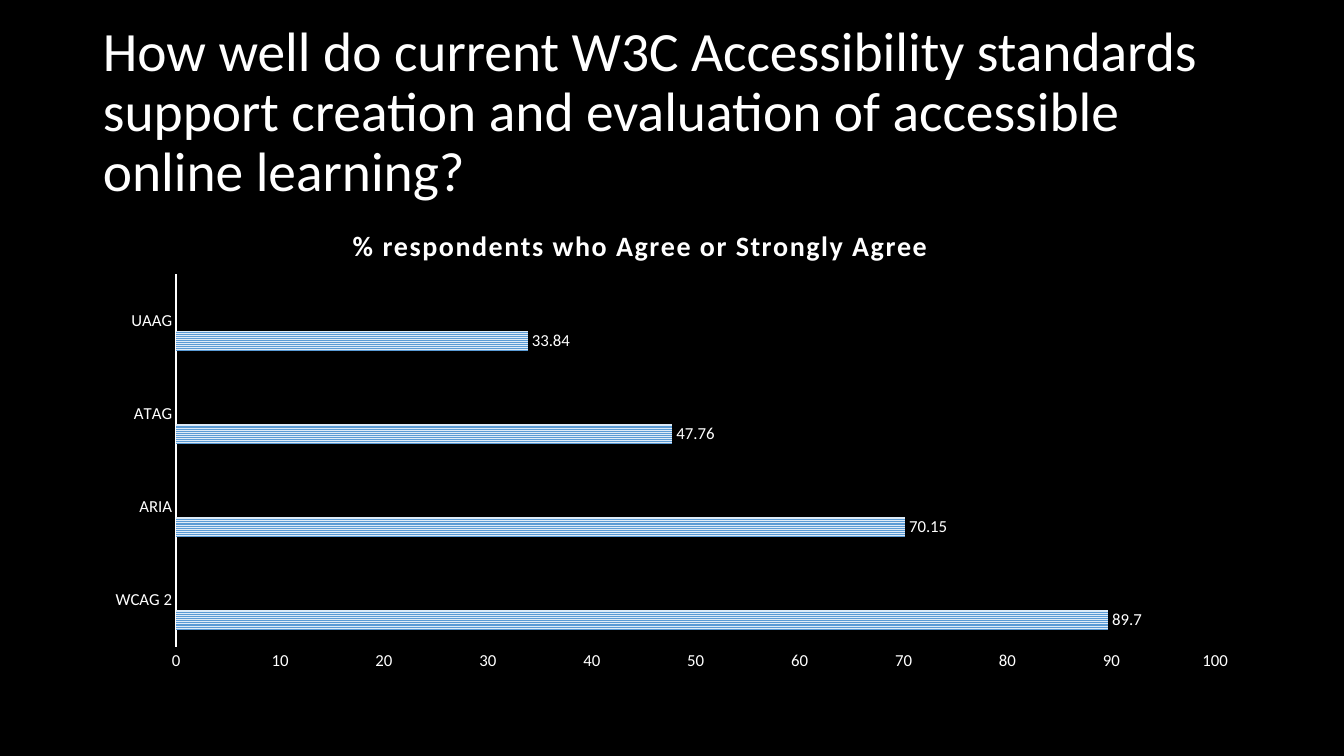
from lxml.etree import SubElement
from pptx import Presentation
from pptx.chart.data import CategoryChartData
from pptx.dml.color import RGBColor
from pptx.enum.chart import XL_CHART_TYPE as ChartType
from pptx.enum.chart import XL_LABEL_POSITION as LabelPosition
from pptx.enum.chart import XL_TICK_MARK as TickMark
from pptx.enum.dml import MSO_PATTERN as Pattern
from pptx.enum.text import MSO_ANCHOR as Anchor
from pptx.enum.text import MSO_AUTO_SIZE as AutoSize
from pptx.enum.text import PP_ALIGN as Align
from pptx.oxml.ns import qn
from pptx.util import Inches, Pt

FONT = "Calibri"
BLACK = RGBColor(0x00, 0x00, 0x00)
WHITE = RGBColor(0xFF, 0xFF, 0xFF)
# Foreground and background of each series' stripes
STRIPES = [
    (RGBColor(0x5B, 0x9B, 0xD5), RGBColor(0xDE, 0xEB, 0xF7)),
    (RGBColor(0xED, 0x7D, 0x31), RGBColor(0xFB, 0xE5, 0xD6)),
    (RGBColor(0xA5, 0xA5, 0xA5), RGBColor(0xED, 0xED, 0xED)),
]

SLIDE_WIDTH, SLIDE_HEIGHT = 13.33, 7.5
MARGIN = 0.92
CONTENT_WIDTH = SLIDE_WIDTH - 2 * MARGIN

QUESTION = ("How well do current W3C Accessibility standards support creation "
            "and evaluation of accessible online learning?")
CHART_TITLE = "% respondents who Agree or Strongly Agree"
STANDARDS = ["WCAG 2", "ARIA", "ATAG", "UAAG"]
AGREEMENT = [89.7, 70.15, 47.76, 33.84]


def style_font(font, size, bold=False):
    font.name = FONT
    font.size = Pt(size)
    font.bold = bold
    font.color.rgb = WHITE


def set_layout(element, following_tag, **shares):
    """Place a chart part by shares of the chart's size."""
    for old_layout in element.findall(qn("c:layout")):
        element.remove(old_layout)
    layout = element.makeelement(qn("c:layout"))
    element.find(qn(following_tag)).addprevious(layout)
    manual = SubElement(layout, qn("c:manualLayout"))
    if "w" in shares:
        SubElement(manual, qn("c:layoutTarget")).set("val", "inner")
    for mode in ("xMode", "yMode"):
        SubElement(manual, qn(f"c:{mode}")).set("val", "edge")
    for name, share in shares.items():
        SubElement(manual, qn(f"c:{name}")).set("val", str(share))


def add_question(slide, left, top, width, height):
    title = slide.shapes.title
    title.left, title.top = Inches(left), Inches(top)
    title.width, title.height = Inches(width), Inches(height)
    text_frame = title.text_frame
    text_frame.text = QUESTION
    text_frame.word_wrap = True
    text_frame.auto_size = AutoSize.NONE
    text_frame.vertical_anchor = Anchor.MIDDLE
    paragraph = text_frame.paragraphs[0]
    paragraph.alignment = Align.LEFT
    paragraph.line_spacing = 0.9
    style_font(paragraph.runs[0].font, 39.6)


def add_agreement_chart(slide, left, top, width, height):
    data = CategoryChartData()
    data.categories = STANDARDS
    data.add_series("Series 1", AGREEMENT)
    for name in ("Series 2", "Series 3"):
        data.add_series(name, [None] * len(STANDARDS))
    chart = slide.shapes.add_chart(
        ChartType.BAR_CLUSTERED, Inches(left), Inches(top),
        Inches(width), Inches(height), data).chart
    chart.has_legend = False
    style_font(chart.font, 10)

    # Chart title with wide letter spacing
    chart.has_title = True
    text_frame = chart.chart_title.text_frame
    text_frame.text = CHART_TITLE
    run = text_frame.paragraphs[0].runs[0]
    style_font(run.font, 20, bold=True)
    run.font._element.set("spc", "100")
    chart.chart_title.include_in_layout = False
    set_layout(chart.chart_title._element, "c:overlay", x=0.22, y=0.04)

    # Striped bars with value labels
    plot = chart.plots[0]
    plot.vary_by_categories = False
    plot.gap_width = 164
    plot.overlap = 0
    for series, (stripe, ground) in zip(plot.series, STRIPES):
        fill = series.format.fill
        fill.patterned()
        fill.pattern = Pattern.NARROW_HORIZONTAL
        fill.fore_color.rgb = stripe
        fill.back_color.rgb = ground
        series.invert_if_negative = False
        labels = series.data_labels
        labels.show_value = True
        labels.position = LabelPosition.OUTSIDE_END
        style_font(labels.font, 12)

    # Axes
    for axis in (chart.category_axis, chart.value_axis):
        axis.has_major_gridlines = False
        axis.major_tick_mark = axis.minor_tick_mark = TickMark.NONE
        style_font(axis.tick_labels.font, 12)
    chart.category_axis.format.line.color.rgb = WHITE
    chart.category_axis.format.line.width = Pt(1.5)
    value_axis = chart.value_axis
    value_axis.minimum_scale, value_axis.maximum_scale = 0, 100
    value_axis.major_unit = 10
    value_axis.tick_labels.number_format = "General"
    value_axis.tick_labels.number_format_is_linked = False
    value_axis.format.line.fill.background()
    plot_area = chart._chartSpace.chart.plotArea
    set_layout(plot_area, "c:barChart", x=0.072, y=0.151, w=0.897, h=0.777)


def main():
    presentation = Presentation()
    presentation.slide_width = Inches(SLIDE_WIDTH)
    presentation.slide_height = Inches(SLIDE_HEIGHT)
    slide = presentation.slides.add_slide(presentation.slide_layouts[5])
    slide.background.fill.solid()
    slide.background.fill.fore_color.rgb = BLACK
    add_question(slide, MARGIN, 0.4, CONTENT_WIDTH, 1.45)
    add_agreement_chart(slide, MARGIN, 2, CONTENT_WIDTH, 4.76)
    presentation.save("out.pptx")


if __name__ == "__main__":
    main()
